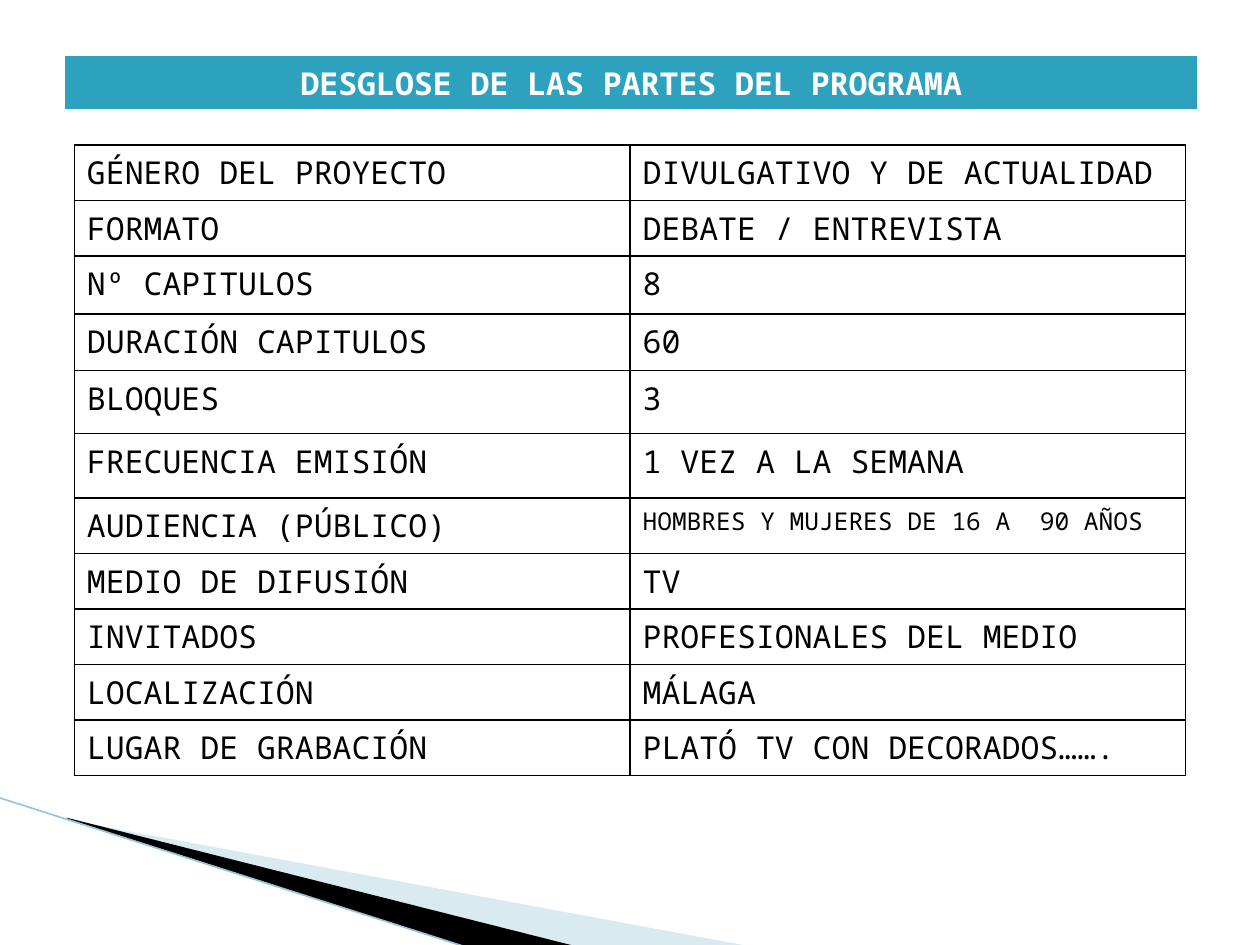
from dataclasses import dataclass

from lxml import etree
from pptx import Presentation
from pptx.dml.color import RGBColor
from pptx.enum.shapes import MSO_CONNECTOR
from pptx.enum.text import PP_ALIGN
from pptx.oxml.ns import qn
from pptx.util import Inches, Pt

COLS, ROWS = 100, 75  # slide grid
UNIT = Inches(10) // COLS
FONT = "Noto Sans Mono"
STRAIGHT, CENTER, LEFT = MSO_CONNECTOR.STRAIGHT, PP_ALIGN.CENTER, PP_ALIGN.LEFT

BLACK = RGBColor(0x00, 0x00, 0x00)
WHITE = RGBColor(0xFF, 0xFF, 0xFF)
TEAL = RGBColor(0x2D, 0xA2, 0xBF)
PALE_BLUE = RGBColor(0xA0, 0xCB, 0xDC)
EDGE_BLUE = RGBColor(0x97, 0xC5, 0xD8)


@dataclass(frozen=True)
class Wedge:
    points: tuple[tuple[float, float], ...]
    color: RGBColor
    opacity: int = 100


@dataclass(frozen=True)
class Row:
    label: str
    value: str
    height: float = 4.3
    value_size: int = 18


WEDGES = (
    Wedge(((5.5, 65.1), (59.5, 75.1), (45.6, 75.1), (5.5, 65)), PALE_BLUE, 40),
    Wedge(((5.3, 64.9), (45.7, 75.1), (37.2, 75.2), (5.4, 65)), BLACK),
)
DETAILS = (
    Row("GÉNERO DEL PROYECTO", "DIVULGATIVO Y DE ACTUALIDAD"),
    Row("FORMATO", "DEBATE / ENTREVISTA"),
    Row("Nº CAPITULOS", "8", 4.6),
    Row("DURACIÓN CAPITULOS", "60", 4.5),
    Row("BLOQUES", "3", 5),
    Row("FRECUENCIA EMISIÓN", "1 VEZ A LA SEMANA", 5.1),
    Row("AUDIENCIA (PÚBLICO)", "HOMBRES Y MUJERES DE 16 A  90 AÑOS", value_size=14),
    Row("MEDIO DE DIFUSIÓN", "TV"),
    Row("INVITADOS", "PROFESIONALES DEL MEDIO"),
    Row("LOCALIZACIÓN", "MÁLAGA"),
    Row("LUGAR DE GRABACIÓN", "PLATÓ TV CON DECORADOS……."),
)


def grid(n: float) -> int:
    return round(n * UNIT)


def write(tf, text: str, *, size=18, color=BLACK, bold=False, align=LEFT) -> None:
    p = tf.paragraphs[0]
    p.alignment = align
    r = p.add_run()
    r.text = text
    r.font.name, r.font.size, r.font.bold = FONT, Pt(size), bold
    r.font.color.rgb = color


def set_borders(cell, color: RGBColor, bottom: float = 1) -> None:
    """Give a cell four solid borders; they must precede its fill in the XML."""
    tc_pr = cell._tc.get_or_add_tcPr()
    for i, (side, width) in enumerate(zip("LRTB", (1, 1, 1, bottom))):
        ln = etree.Element(qn(f"a:ln{side}"), w=str(Pt(width)))
        fill = etree.SubElement(ln, qn("a:solidFill"))
        etree.SubElement(fill, qn("a:srgbClr"), val=str(color))
        tc_pr.insert(i, ln)


def add_plain_table(s, left: float, top: float, widths: list[float], heights: list[float]):
    table = s.shapes.add_table(len(heights), len(widths), grid(left), grid(top),
                               grid(sum(widths)), grid(sum(heights))).table
    table.first_row = table.horz_banding = False
    for column, width in zip(table.columns, widths):
        column.width = grid(width)
    for row, height in zip(table.rows, heights):
        row.height = grid(height)
    return table


def add_wedge(s, wedge: Wedge) -> None:
    start, *rest = [(grid(x), grid(y)) for x, y in wedge.points]
    builder = s.shapes.build_freeform(*start)
    builder.add_line_segments(rest, close=True)
    sp = builder.convert_to_shape()
    sp.shadow.inherit = False
    sp.line.fill.background()
    sp.fill.solid()
    sp.fill.fore_color.rgb = wedge.color
    if wedge.opacity < 100:
        color = sp._element.spPr.find(f"{qn('a:solidFill')}/{qn('a:srgbClr')}")
        etree.SubElement(color, qn("a:alpha"), val=str(wedge.opacity * 1000))


def add_edge(s) -> None:
    line = s.shapes.add_connector(STRAIGHT, grid(-0.1), grid(63.3), grid(37.1), grid(75.2))
    line.line.color.rgb = EDGE_BLUE
    line.line.width = Pt(0.95)
    etree.SubElement(line._element.spPr, qn("a:effectLst"))


def add_heading(s) -> None:
    cell = add_plain_table(s, 5.1, 4.4, [90], [4.1]).cell(0, 0)
    cell.fill.solid()
    cell.fill.fore_color.rgb = TEAL
    set_borders(cell, WHITE, bottom=3)
    write(cell.text_frame, "DESGLOSE DE LAS PARTES DEL PROGRAMA",
          color=WHITE, bold=True, align=CENTER)


def add_details(s) -> None:
    table = add_plain_table(s, 5.9, 11.5, [44.1] * 2, [row.height for row in DETAILS])
    for i, row in enumerate(DETAILS):
        for j, (text, size) in enumerate(((row.label, 18), (row.value, row.value_size))):
            cell = table.cell(i, j)
            cell.fill.background()
            set_borders(cell, BLACK)
            write(cell.text_frame, text, size=size)


def main() -> None:
    prs = Presentation()
    prs.slide_width, prs.slide_height = grid(COLS), grid(ROWS)
    s = prs.slides.add_slide(prs.slide_layouts[6])
    for wedge in WEDGES:
        add_wedge(s, wedge)
    add_edge(s)
    add_heading(s)
    add_details(s)
    prs.save("out.pptx")


if __name__ == "__main__":
    main()
